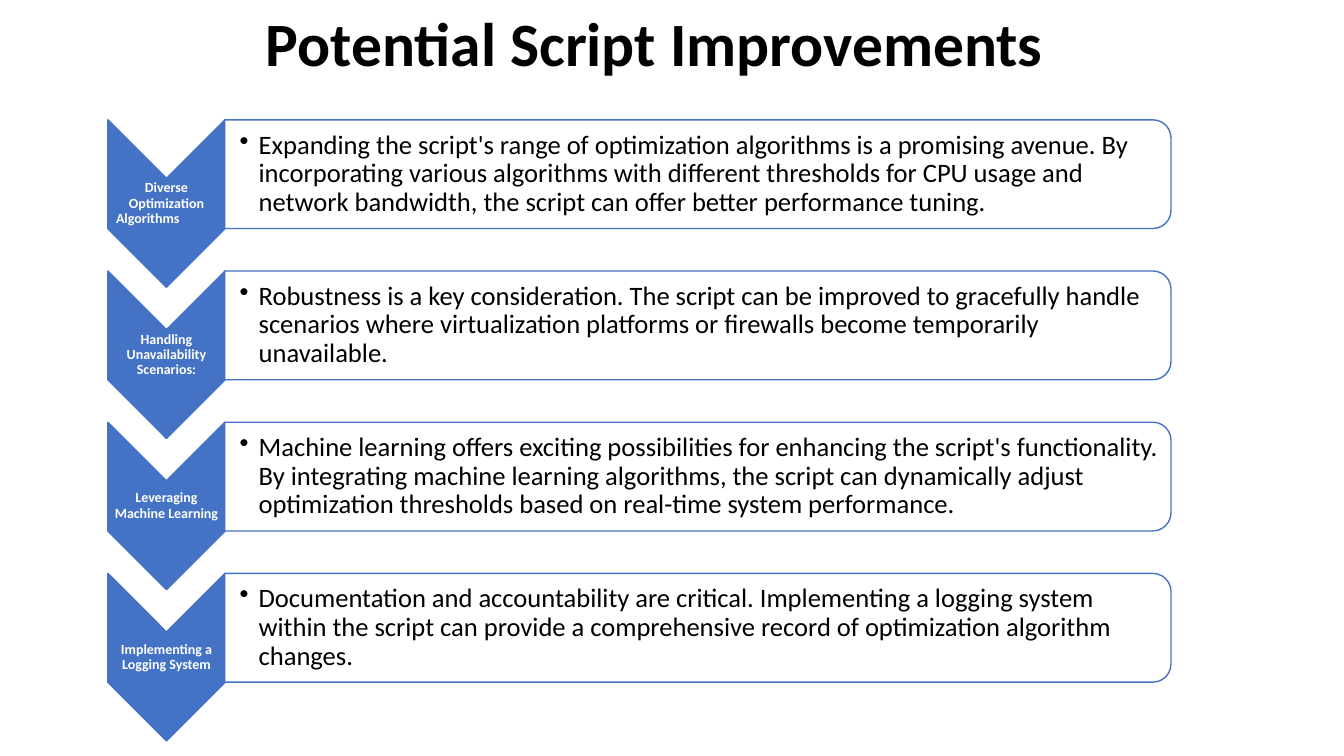
from lxml import etree
from pptx import Presentation
from pptx.dml.color import RGBColor
from pptx.enum.shapes import MSO_SHAPE
from pptx.enum.text import MSO_ANCHOR, PP_ALIGN
from pptx.oxml.ns import qn
from pptx.util import Cm, Pt

CHEVRON = MSO_SHAPE.CHEVRON
PANEL = MSO_SHAPE.ROUND_2_SAME_RECTANGLE
TOP, MIDDLE = MSO_ANCHOR.TOP, MSO_ANCHOR.MIDDLE
LEFT, CENTER = PP_ALIGN.LEFT, PP_ALIGN.CENTER

FONT = "Calibri"
BLUE, WHITE, BLACK = "4472C4", "FFFFFF", "000000"
FIRST, STEP = 3.02, 3.81
ARROW_X, ARROW_W, ARROW_H = 2.72, 2.95, 4.22
PANEL_X, PANEL_W, PANEL_H = 5.66, 23.85, 2.74

ITEMS = [
    ("Diverse Optimization Algorithms\t",
     "Expanding the script's range of optimization algorithms is a promising "
     "avenue. By incorporating various algorithms with different thresholds "
     "for CPU usage and network bandwidth, the script can offer better "
     "performance tuning."),
    ("Handling Unavailability Scenarios:",
     "Robustness is a key consideration. The script can be improved to "
     "gracefully handle scenarios where virtualization platforms or firewalls "
     "become temporarily unavailable."),
    ("Leveraging Machine Learning",
     "Machine learning offers exciting possibilities for enhancing the "
     "script's functionality. By integrating machine learning algorithms, the "
     "script can dynamically adjust optimization thresholds based on "
     "real-time system performance."),
    ("Implementing a Logging System",
     "Documentation and accountability are critical. Implementing a logging "
     "system within the script can provide a comprehensive record of "
     "optimization algorithm changes."),
]


def color(code):
    return RGBColor.from_string(code)


def add_text(slide, text, x, y, w, h, size, ink=BLACK, bold=False,
             align=LEFT, anchor=MIDDLE, inset=0.03, pad=0.03,
             spacing=0.9, bullet=False):
    box = slide.shapes.add_textbox(Cm(x), Cm(y), Cm(w), Cm(h))
    frame = box.text_frame
    frame.word_wrap = True
    frame.vertical_anchor = anchor
    frame.margin_left = Cm(inset)
    frame.margin_right = frame.margin_top = frame.margin_bottom = Cm(pad)
    para = frame.paragraphs[0]
    para.alignment = align
    para.line_spacing = spacing
    run = para.add_run()
    run.text = text
    font = run.font
    font.name, font.size, font.bold = FONT, Pt(size), bold
    font.color.rgb = color(ink)
    if bullet:
        props = para._p.get_or_add_pPr()
        props.set("marL", str(Cm(0.48)))
        props.set("indent", str(-Cm(0.48)))
        etree.SubElement(props, qn("a:buChar"), char="•")


def add_turned(slide, kind, x, y, w, h, fill, alpha=100):
    shape = slide.shapes.add_shape(
        kind, Cm(x + (w - h) / 2), Cm(y + (h - w) / 2), Cm(h), Cm(w))
    shape.rotation = 90
    shape.shadow.inherit = False
    shape.fill.solid()
    shape.fill.fore_color.rgb = color(fill)
    shape.line.color.rgb = color(BLUE)
    shape.line.width = Pt(1)
    if alpha < 100:
        tint = shape._element.spPr.find(qn("a:solidFill"))[0]
        etree.SubElement(tint, qn("a:alpha"), val=str(alpha * 1000))


def add_item(slide, y, label, body):
    add_turned(slide, CHEVRON, ARROW_X, y, ARROW_W, ARROW_H, BLUE)
    add_text(slide, label, ARROW_X, y + ARROW_W / 2, ARROW_W,
             ARROW_H - ARROW_W, 10, ink=WHITE, bold=True, align=CENTER)
    add_turned(slide, PANEL, PANEL_X, y, PANEL_W, PANEL_H, WHITE, alpha=90)
    add_text(slide, body, PANEL_X, y + 0.13, PANEL_W - 0.15, PANEL_H - 0.26,
             19, inset=0.38, bullet=True)


def main():
    deck = Presentation()
    deck.slide_width, deck.slide_height = Cm(33.87), Cm(19.05)
    slide = deck.slides.add_slide(deck.slide_layouts[6])
    add_text(slide, "Potential Script Improvements", 6.45, 0, 25.4, 2.13, 44,
             bold=True, anchor=TOP, inset=0.25, pad=0.13, spacing=1.0)
    for row, (label, body) in enumerate(ITEMS):
        add_item(slide, FIRST + row * STEP, label, body)
    deck.save("out.pptx")


if __name__ == "__main__":
    main()
